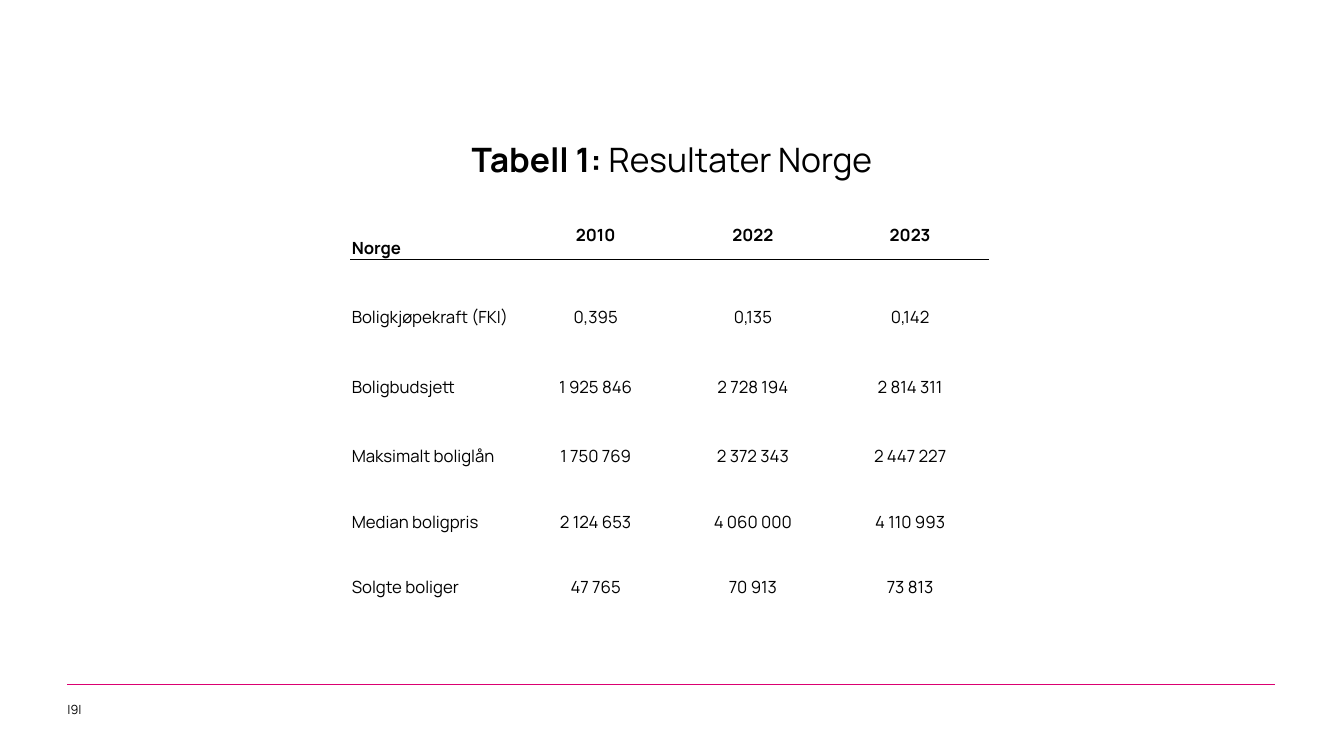
from pptx import Presentation
from pptx.dml.color import RGBColor
from pptx.enum.shapes import MSO_CONNECTOR as Connector
from pptx.enum.text import MSO_ANCHOR as Anchor, MSO_AUTO_SIZE as AutoSize, PP_ALIGN as Align
from pptx.oxml import parse_xml
from pptx.oxml.ns import nsdecls
from pptx.util import Inches, Pt

COLORS = {"text": "000000", "paper": "FFFFFF", "accent": "DB0071"}
FONT = "Manrope"
GRID_COLUMNS, GRID_ROWS = 160, 90
RULE_WIDTH = Pt(0.5)

RESULTS = [
    ("Norge", "2010", "2022", "2023"),
    ("Boligkjøpekraft (FKI)", "0,395", "0,135", "0,142"),
    ("Boligbudsjett", "1 925 846", "2 728 194", "2 814 311"),
    ("Maksimalt boliglån", "1 750 769", "2 372 343", "2 447 227"),
    ("Median boligpris", "2 124 653", "4 060 000", "4 110 993"),
    ("Solgte boliger", "47 765", "70 913", "73 813"),
]
COLUMN_WIDTHS = [19.8] + [18.72] * 3
ROW_HEIGHTS = [5.88] + [8.28] * 3 + [7.8] * 2


class SlideBuilder:
    def __init__(self, presentation):
        self.width = presentation.slide_width
        self.height = presentation.slide_height
        self.slide = presentation.slides.add_slide(presentation.slide_layouts[6])

    def x(self, columns):
        return round(self.width * columns / GRID_COLUMNS)

    def y(self, rows):
        return round(self.height * rows / GRID_ROWS)

    def box(self, left, top, width, height):
        return self.x(left), self.y(top), self.x(width), self.y(height)

    def add_runs(self, paragraph, runs, size, align):
        paragraph.alignment = align
        for text, bold in runs:
            run = paragraph.add_run()
            run.text = text
            run.font.name = FONT
            run.font.size = Pt(size)
            run.font.bold = bold
            run.font.color.rgb = RGBColor.from_string(COLORS["text"])

    def text(self, bounds, runs, size, align=Align.LEFT, anchor=Anchor.TOP):
        frame = self.slide.shapes.add_textbox(*self.box(*bounds)).text_frame
        frame.word_wrap = True
        frame.auto_size = AutoSize.SHAPE_TO_FIT_TEXT
        frame.vertical_anchor = anchor
        self.add_runs(frame.paragraphs[0], runs, size, align)

    def rule(self, left, right, row):
        line = self.slide.shapes.add_connector(
            Connector.STRAIGHT, self.x(left), self.y(row), self.x(right), self.y(row))
        line.line.color.rgb = RGBColor.from_string(COLORS["accent"])
        line.line.width = RULE_WIDTH
        line._element.spPr.append(parse_xml(f"<a:effectLst {nsdecls('a')}/>"))

    def border(self, cell, side):
        cell._tc.get_or_add_tcPr().insert(0, parse_xml(
            f'<a:ln{side} {nsdecls("a")} w="{RULE_WIDTH}"><a:solidFill>'
            f'<a:srgbClr val="{COLORS["text"]}"/></a:solidFill></a:ln{side}>'))

    def table(self, left, top, records, widths, heights, size):
        bounds = self.box(left, top, sum(widths), sum(heights))
        table = self.slide.shapes.add_table(len(records), len(widths), *bounds).table
        table.first_row = table.horz_banding = False
        for column, width in zip(table.columns, widths):
            column.width = self.x(width)
        for row, height in zip(table.rows, heights):
            row.height = self.y(height)
        for row, record in enumerate(records):
            for column, value in enumerate(record):
                cell = table.cell(row, column)
                cell.margin_left = cell.margin_right = cell.margin_top = Inches(0.01)
                cell.margin_bottom = 0
                cell.fill.solid()
                cell.fill.fore_color.rgb = RGBColor.from_string(COLORS["paper"])
                year = row == 0 and column > 0
                cell.vertical_anchor = Anchor.MIDDLE if year else Anchor.BOTTOM
                align = Align.CENTER if column else Align.LEFT
                self.add_runs(cell.text_frame.paragraphs[0], [(value, row == 0)], size, align)
                if row < 2:
                    self.border(cell, "T" if row else "B")


def main():
    presentation = Presentation()
    presentation.slide_width = Inches(13.33)
    presentation.slide_height = Inches(7.5)
    builder = SlideBuilder(presentation)
    builder.rule(8, 151.8, 81.5)
    builder.text((6.84, 81.12, 6.12, 4.8), [("|9|", False)], 9, anchor=Anchor.BOTTOM)
    builder.text((0, 16, GRID_COLUMNS, 6),
                 [("Tabell 1: ", True), ("Resultater Norge", False)], 24, Align.CENTER)
    builder.table(41.76, 25, RESULTS, COLUMN_WIDTHS, ROW_HEIGHTS, 12)
    presentation.save("out.pptx")


if __name__ == "__main__":
    main()
